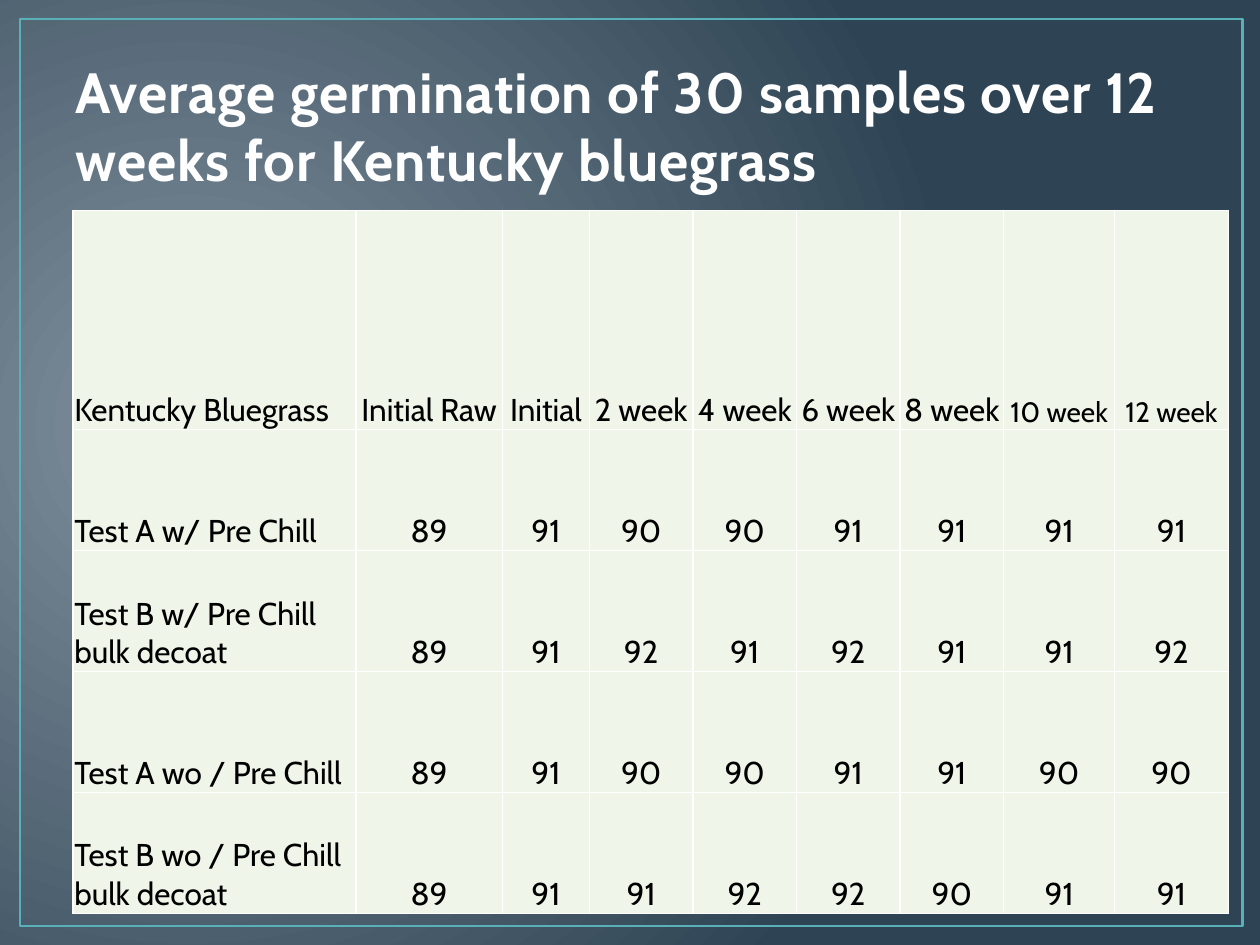
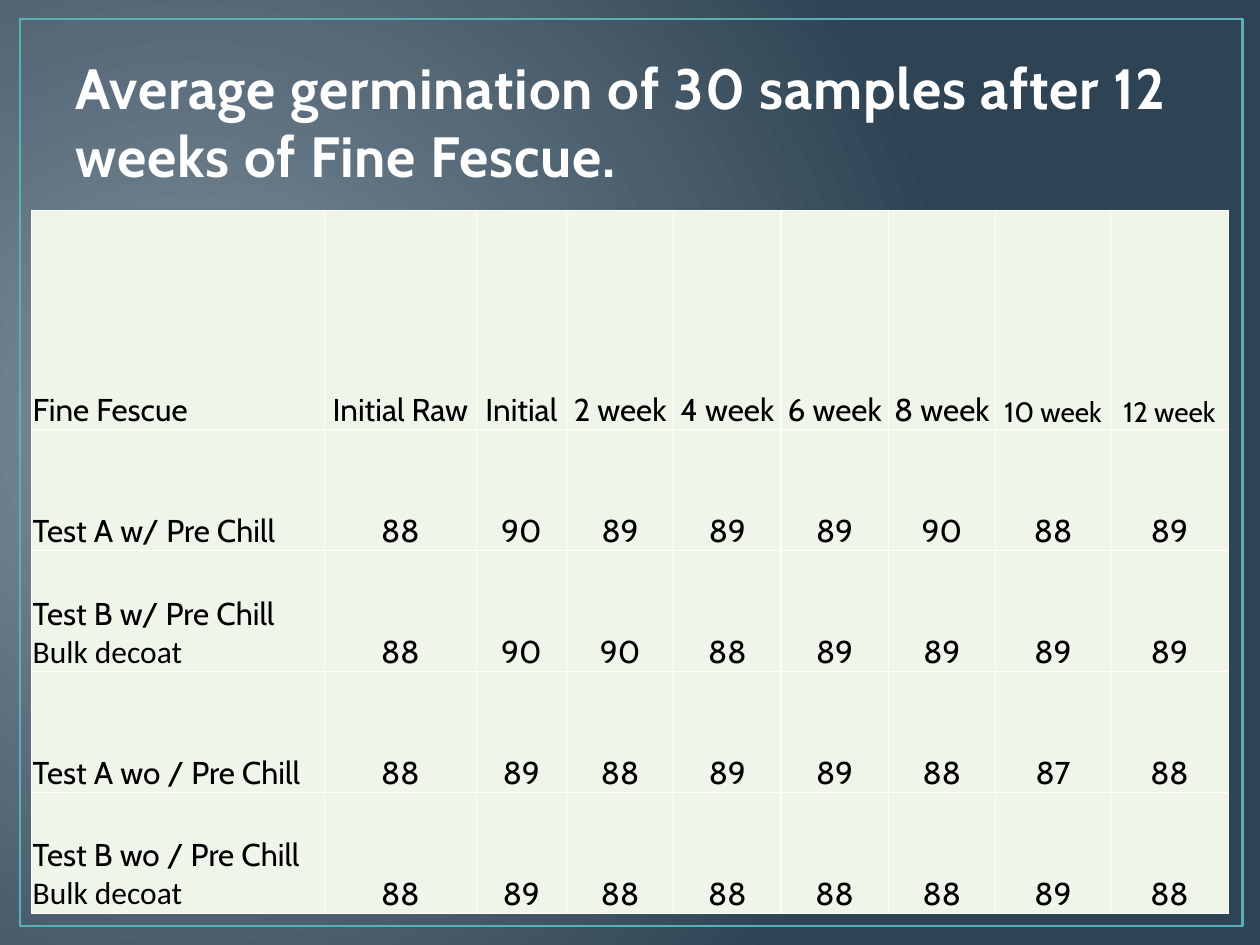
"""Build two slides with germination tables for stored grass seed."""
from lxml import etree
from pptx import Presentation
from pptx.dml.color import RGBColor
from pptx.enum.shapes import MSO_SHAPE
from pptx.enum.text import MSO_ANCHOR, MSO_AUTO_SIZE, PP_ALIGN
from pptx.oxml.ns import qn
from pptx.util import Inches, Pt

RECTANGLE = MSO_SHAPE.RECTANGLE
BOTTOM = MSO_ANCHOR.BOTTOM
NO_FIT = MSO_AUTO_SIZE.NONE
LEFT, CENTER = PP_ALIGN.LEFT, PP_ALIGN.CENTER

GLOW = RGBColor(0x81, 0x91, 0x9E)
NAVY = RGBColor(0x2E, 0x44, 0x54)
TEAL = RGBColor(0x59, 0xB0, 0xB9)
TITLE_WHITE = RGBColor(0xFE, 0xFE, 0xFE)
OLIVE = RGBColor(0x4C, 0x63, 0x12)
WHITE = RGBColor(0xFF, 0xFF, 0xFF)
BLACK = RGBColor(0, 0, 0)
PALE_GREEN = RGBColor(0xEF, 0xF5, 0xE8)

FONT, NOTE_FONT = "Cabin", "Calibri"
TABLE_TOP, TABLE_RIGHT = 1.67, 9.75
COL_SHARES = [2.24, 1.16, 0.69] + [0.82] * 4 + [0.88, 0.9]
ROW_HEIGHTS = [1.74] + [0.96] * 4
HEADINGS = ["Initial Raw", "Initial"] + [f"{w} week" for w in range(2, 13, 2)]

SLIDES = [
    ("Average germination of 30 samples over 12 weeks for Kentucky bluegrass",
     0.33, 0.58, [
         ["Kentucky Bluegrass"] + HEADINGS,
         ["Test A w/ Pre Chill", 89, 91, 90, 90, 91, 91, 91, 91],
         ["Test B w/ Pre Chill bulk decoat", 89, 91, 92, 91, 92, 91, 91, 92],
         ["Test A wo / Pre Chill", 89, 91, 90, 90, 91, 91, 90, 90],
         ["Test B wo / Pre Chill bulk decoat", 89, 91, 91, 92, 92, 90, 91, 91],
     ]),
    ("Average germination of 30 samples after 12 weeks of Fine Fescue.",
     0.3, 0.25, [
         ["Fine Fescue"] + HEADINGS,
         ["Test A w/ Pre Chill", 88, 90, 89, 89, 89, 90, 88, 89],
         ["Test B w/ Pre Chill\nBulk decoat", 88, 90, 90, 88, 89, 89, 89, 89],
         ["Test A wo / Pre Chill", 88, 89, 88, 89, 89, 88, 87, 88],
         ["Test B wo / Pre Chill\nBulk decoat", 88, 89, 88, 88, 88, 88, 89, 88],
     ]),
]


def add_line(parent, tag, width, color):
    """Add a solid line element to a cell's or a run's properties."""
    ln = etree.SubElement(parent, qn(tag), w=str(Pt(width)))
    fill = etree.SubElement(ln, qn("a:solidFill"))
    etree.SubElement(fill, qn("a:srgbClr"), val=str(color))
    return ln


def style_run(r, size, color, font=FONT):
    """Set the font of a run."""
    r.font.size = Pt(size)
    r.font.color.rgb = color
    r.font.name = font


prs = Presentation()
prs.slide_width, prs.slide_height = Inches(10), Inches(7.5)
master = prs.slide_master
layout = prs.slide_layouts[5]

fill = master.background.fill
fill.gradient()
for stop, color in zip(fill.gradient_stops, (GLOW, NAVY)):
    stop.color.rgb = color
grad = next(master.element.iter(qn("a:gradFill")))
grad.remove(grad.find(qn("a:lin")))
circle = etree.SubElement(grad, qn("a:path"), path="circle")
etree.SubElement(circle, qn("a:fillToRect"), l="15000", t="50000", r="85000", b="60000")

for n, (title, title_top, table_left, rows) in enumerate(SLIDES):
    s = prs.slides.add_slide(layout)

    if n == 0:
        frame = s.shapes.add_shape(RECTANGLE, Inches(0.16), Inches(0.15),
                                   Inches(9.7), Inches(7.2))
        frame.shadow.inherit = False
        frame.fill.background()
        frame.line.color.rgb = TEAL
        frame.line.width = Pt(1.5)
        frame.element.nvSpPr.cNvPr.set("id", "20")
        master.shapes.element.insert(2, frame.element)

    sp = s.shapes.title
    sp.left, sp.top = Inches(0.5), Inches(title_top)
    sp.width, sp.height = Inches(9), Inches(1.25)
    tf = sp.text_frame
    tf.text = title
    tf.word_wrap = True
    tf.auto_size = NO_FIT
    tf.vertical_anchor = BOTTOM
    p = tf.paragraphs[0]
    p.alignment = LEFT
    r = p.runs[0]
    style_run(r, 32.4, TITLE_WHITE)
    r.font.bold = True
    rpr = r.font._element
    rpr.set("spc", "50")
    rpr.insert(0, add_line(rpr, "a:ln", 1.05, OLIVE))

    width = TABLE_RIGHT - table_left
    table = s.shapes.add_table(len(rows), len(COL_SHARES), Inches(table_left),
                               Inches(TABLE_TOP), Inches(width),
                               Inches(sum(ROW_HEIGHTS))).table
    table.first_row = table.horz_banding = False
    for col, share in zip(table.columns, COL_SHARES):
        col.width = Inches(width * share / sum(COL_SHARES))
    for row, height in zip(table.rows, ROW_HEIGHTS):
        row.height = Inches(height)

    for i, values in enumerate(rows):
        for j, value in enumerate(values):
            cell = table.cell(i, j)
            cell.text = str(value)
            cell.vertical_anchor = BOTTOM
            cell.margin_left = cell.margin_right = cell.margin_top = Inches(0.01)
            cell.margin_bottom = 0
            for side in "LRTB":
                add_line(cell._tc.tcPr, f"a:ln{side}", 1, WHITE)
            cell.fill.solid()
            cell.fill.fore_color.rgb = PALE_GREEN
            for k, p in enumerate(cell.text_frame.paragraphs):
                p.alignment = CENTER if j else LEFT
                style_run(p.runs[0], 16 if i == 0 and j > 6 else 18, BLACK,
                          NOTE_FONT if k else FONT)

prs.save("out.pptx")
